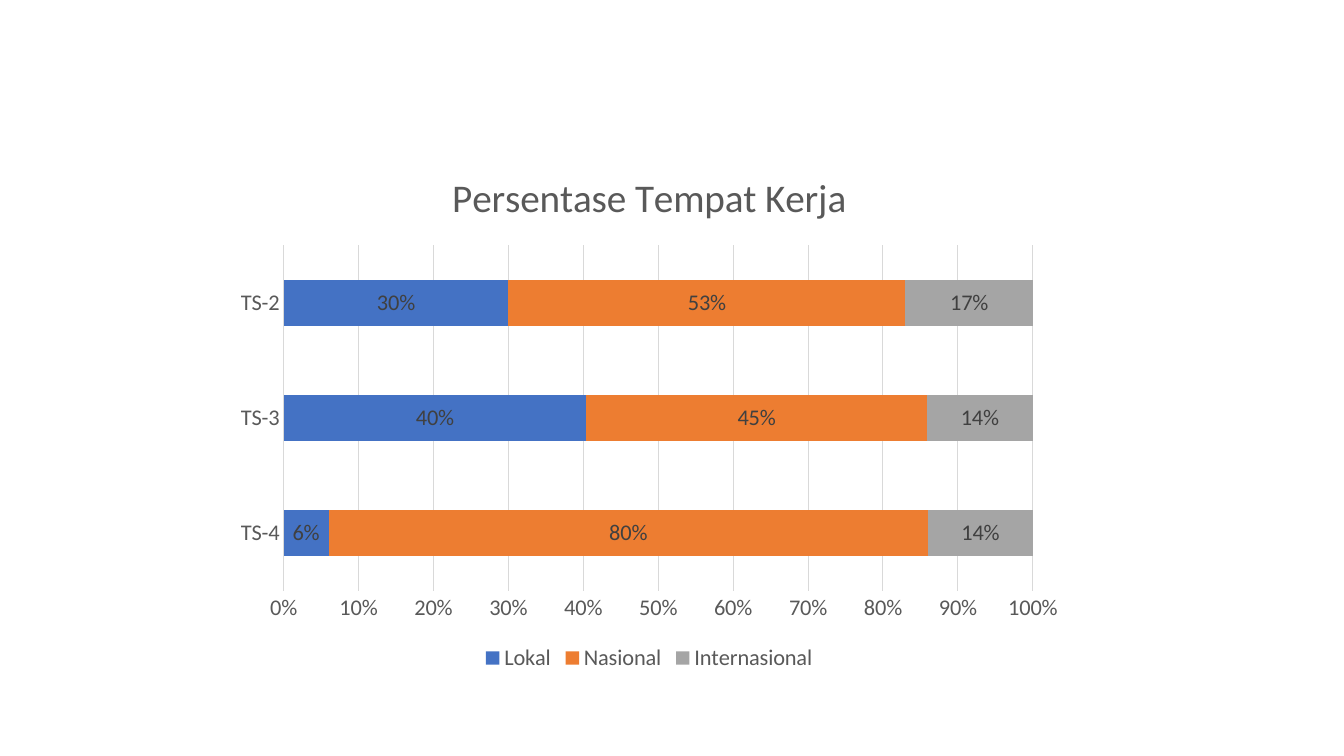
from dataclasses import dataclass

from pptx import Presentation
from pptx.chart.axis import _BaseAxis as Axis
from pptx.chart.chart import Chart
from pptx.chart.data import CategoryChartData as ChartData
from pptx.chart.series import BarSeries
from pptx.dml.color import RGBColor as RGB
from pptx.enum.chart import XL_CHART_TYPE as ChartType
from pptx.enum.chart import XL_LABEL_POSITION as LabelPos
from pptx.enum.chart import XL_LEGEND_POSITION as LegendPos
from pptx.enum.chart import XL_TICK_MARK as Tick
from pptx.text.text import Font
from pptx.util import Cm, Pt


@dataclass(frozen=True)
class Theme:
    font: str = "Calibri"
    text: RGB = RGB(0x59, 0x59, 0x59)
    label: RGB = RGB(0x40, 0x40, 0x40)
    grid: RGB = RGB(0xD9, 0xD9, 0xD9)
    blue: RGB = RGB(0x44, 0x72, 0xC4)
    orange: RGB = RGB(0xED, 0x7D, 0x31)
    gray: RGB = RGB(0xA5, 0xA5, 0xA5)
    title_size: Pt = Pt(28)
    body_size: Pt = Pt(16)
    line_width: Pt = Pt(0.75)


@dataclass(frozen=True)
class Workplace:
    name: str
    shares: tuple[float, ...]
    color: RGB


THEME = Theme()
PERCENT = "0%"
YEARS = ("TS-4", "TS-3", "TS-2")
WORKPLACES = (
    Workplace("Lokal", (0.06, 0.4, 0.3), THEME.blue),
    Workplace("Nasional", (0.8, 0.45, 0.53), THEME.orange),
    Workplace("Internasional", (0.14, 0.14, 0.17), THEME.gray),
)


def style_font(font: Font, size: Pt = THEME.body_size, color: RGB = THEME.text) -> None:
    font.name = THEME.font
    font.size = size
    font.bold = False
    font.color.rgb = color


def style_axis(axis: Axis) -> None:
    axis.major_tick_mark = Tick.NONE
    axis.minor_tick_mark = Tick.NONE
    style_font(axis.tick_labels.font)


def style_series(series: BarSeries, color: RGB) -> None:
    series.format.fill.solid()
    series.format.fill.fore_color.rgb = color
    labels = series.data_labels
    labels.show_value = True
    labels.position = LabelPos.CENTER
    labels.number_format = PERCENT
    labels.number_format_is_linked = False
    style_font(labels.font, color=THEME.label)


def style_title(chart: Chart, text: str) -> None:
    chart.has_title = True
    tf = chart.chart_title.text_frame
    tf.text = text
    style_font(tf.paragraphs[0].runs[0].font, THEME.title_size)
    chart.chart_title.include_in_layout = False


def style_legend(chart: Chart) -> None:
    chart.has_legend = True
    chart.legend.position = LegendPos.BOTTOM
    chart.legend.include_in_layout = False
    style_font(chart.legend.font)


def style_axes(chart: Chart) -> None:
    years, shares = chart.category_axis, chart.value_axis
    for axis in (years, shares):
        style_axis(axis)
    shares.has_major_gridlines = True
    for line in (years.format.line, shares.major_gridlines.format.line):
        line.color.rgb = THEME.grid
        line.width = THEME.line_width
    shares.format.line.fill.background()
    shares.tick_labels.number_format = PERCENT
    shares.tick_labels.number_format_is_linked = False


def main() -> None:
    prs = Presentation()
    prs.slide_width, prs.slide_height = Cm(33.87), Cm(19.05)
    s = prs.slides.add_slide(prs.slide_layouts[6])

    data = ChartData(number_format=PERCENT)
    data.categories = YEARS
    for workplace in WORKPLACES:
        data.add_series(workplace.name, workplace.shares)
    chart = s.shapes.add_chart(
        ChartType.BAR_STACKED_100, Cm(5.64), Cm(3.73), Cm(21.44), Cm(13.31), data
    ).chart

    style_font(chart.font)
    style_title(chart, "Persentase Tempat Kerja")
    style_legend(chart)
    style_axes(chart)
    plot = chart.plots[0]
    plot.gap_width, plot.overlap = 150, 100
    plot.vary_by_categories = False
    for series, workplace in zip(plot.series, WORKPLACES):
        style_series(series, workplace.color)

    prs.save("out.pptx")


if __name__ == "__main__":
    main()
